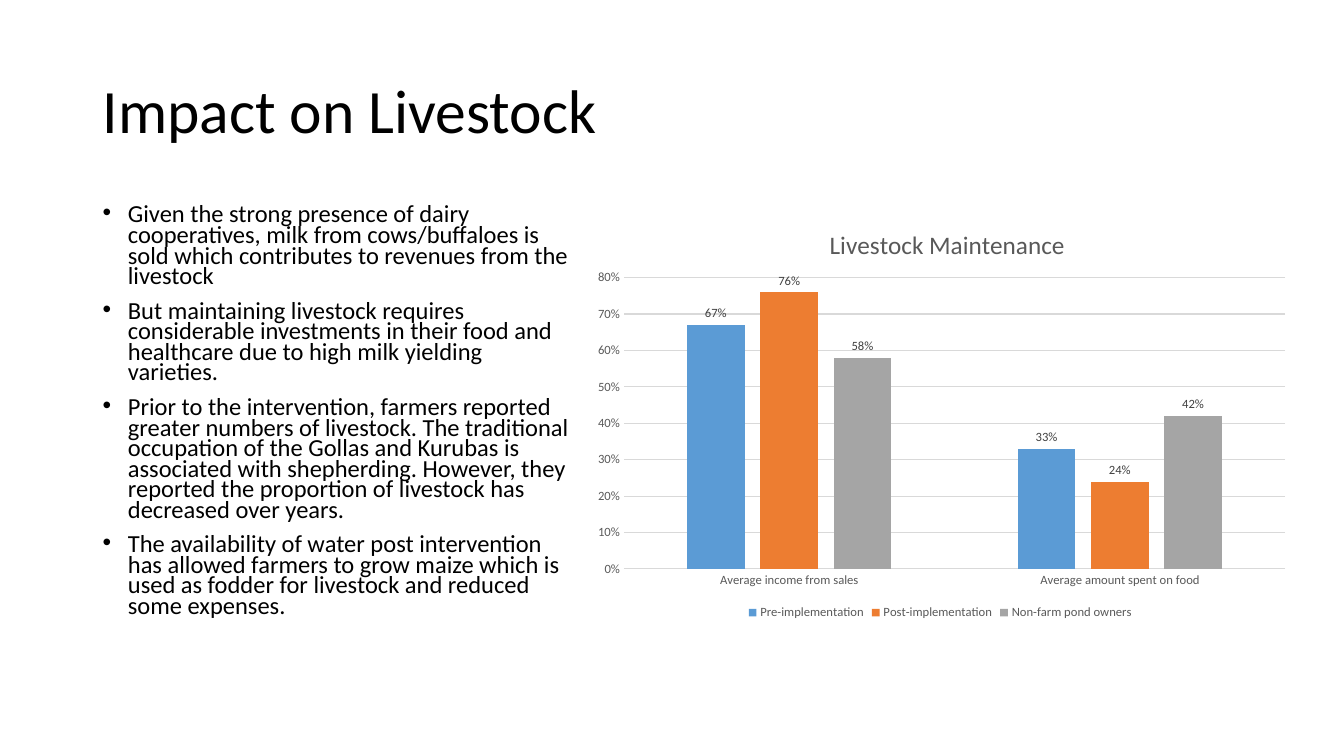
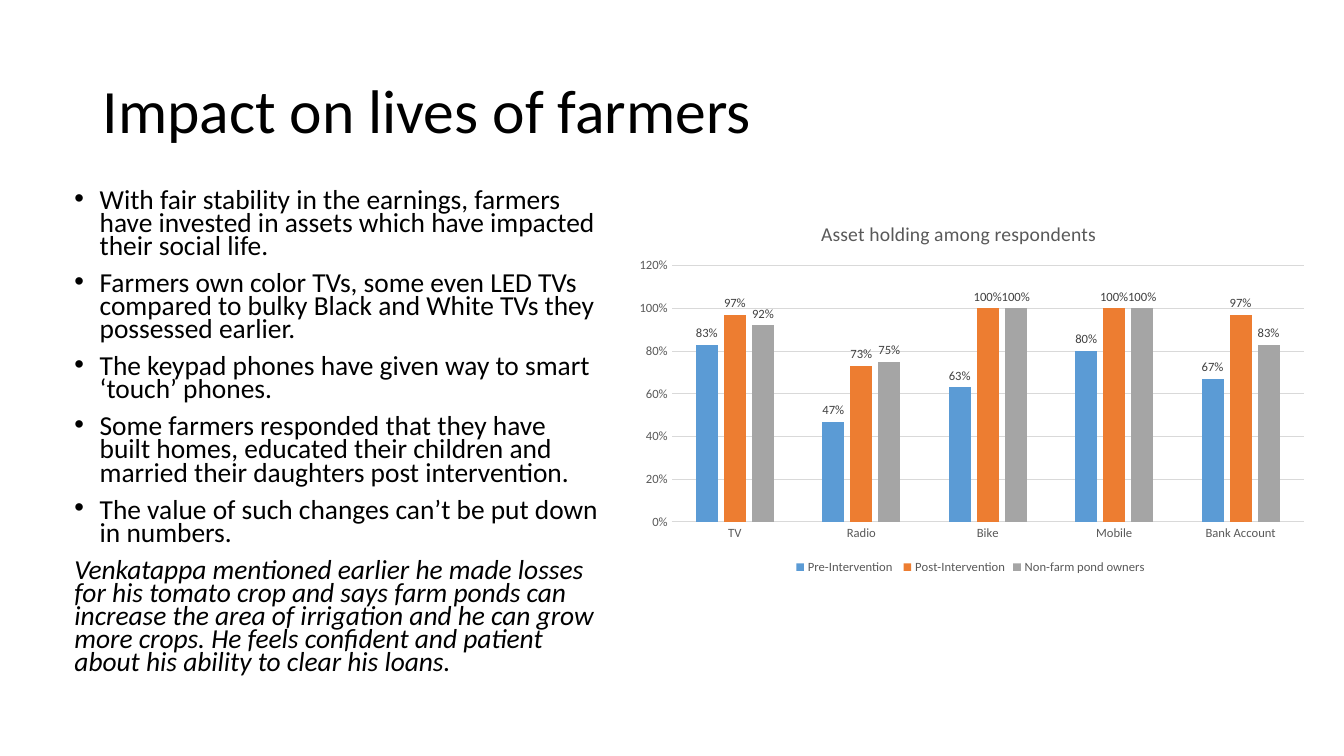
from lxml.etree import SubElement as Sub
from pptx import Presentation
from pptx.chart.data import CategoryChartData as Data
from pptx.dml.color import RGBColor as Rgb
from pptx.enum.chart import XL_CHART_TYPE as Kind, XL_LABEL_POSITION as Spot
from pptx.enum.chart import XL_LEGEND_POSITION as Side, XL_TICK_MARK as Tick
from pptx.enum.text import MSO_ANCHOR as Anchor
from pptx.oxml.ns import qn
from pptx.util import Inches, Pt

FONT = "Calibri"
HUES = {"text": "000000", "soft": "595959", "label": "404040", "grid": "D9D9D9",
        "pre": "5B9BD5", "post": "ED7D31", "none": "A5A5A5"}


def hue(name):
    """Return the named colour."""
    return Rgb.from_string(HUES[name])


def style(font, size, color, italic=False):
    """Format a font."""
    font.name, font.size, font.color.rgb = FONT, Pt(size), hue(color)
    font.bold, font.italic = False, italic


def write(para, text, size=18, color="text", italic=False, space=0.9, before=0, bullet=False):
    """Fill a paragraph with formatted text."""
    run = para.add_run()
    run.text = text
    style(run.font, size, color, italic)
    para.line_spacing, para.space_before = space, Pt(before)
    if bullet:
        props = para._p.get_or_add_pPr()
        props.set("marL", str(Inches(0.25)))
        props.set("indent", str(-Inches(0.25)))
        Sub(props, qn("a:buFont"), typeface="Arial")
        Sub(props, qn("a:buChar"), char="•")


def frame(slide, box):
    """Add a wrapping text box and return its text frame."""
    text = slide.shapes.add_textbox(*map(Inches, box)).text_frame
    text.word_wrap = True
    return text


def head(slide, text):
    """Add the slide title."""
    body = frame(slide, (0.92, 0.4, 11.5, 1.45))
    body.vertical_anchor = Anchor.MIDDLE
    write(body.paragraphs[0], text, size=44)


def points(slide, box, items, size, quote=None):
    """Add a bullet list with an optional closing quote."""
    body = frame(slide, box)
    rows = [(item, True) for item in items] + ([(quote, False)] if quote else [])
    for num, (text, mark) in enumerate(rows):
        para = body.add_paragraph() if num else body.paragraphs[0]
        write(para, text, size=size, italic=not mark, space=0.7, before=10, bullet=mark)


def place(node, index, **parts):
    """Give a chart part a fixed place, in fractions of the chart."""
    for old in node.findall(qn("c:layout")):
        node.remove(old)
    layout = node.makeelement(qn("c:layout"))
    node.insert(index, layout)
    manual = Sub(layout, qn("c:manualLayout"))
    if "w" in parts:
        Sub(manual, qn("c:layoutTarget"), val="inner")
    for key in "xy":
        Sub(manual, qn(f"c:{key}Mode"), val="edge")
    for key, val in parts.items():
        Sub(manual, qn(f"c:{key}"), val=str(val))


def axes(chart, top, step):
    """Format both axes and the grid."""
    for axis in (chart.category_axis, chart.value_axis):
        axis.major_tick_mark = axis.minor_tick_mark = Tick.NONE
        style(axis.tick_labels.font, 9, "soft")
    vals = chart.value_axis
    vals.minimum_scale, vals.maximum_scale, vals.major_unit = 0, top, step
    vals.tick_labels.number_format = "0%"
    vals.tick_labels.number_format_is_linked = False
    vals.format.line.fill.background()
    for part in (chart.category_axis, vals.major_gridlines):
        part.format.line.color.rgb = hue("grid")
        part.format.line.width = Pt(0.75)


def bars(slide, box, title, size, cats, series, top, step, spot, plot):
    """Add a clustered column chart."""
    data = Data(number_format="0%")
    data.categories = cats
    for name, vals in series:
        data.add_series(name, vals)
    chart = slide.shapes.add_chart(Kind.COLUMN_CLUSTERED, *map(Inches, box), data).chart
    style(chart.font, 10, "text")
    chart.has_title = True
    write(chart.chart_title.text_frame.paragraphs[0], title, size=size, color="soft", space=1)
    chart.chart_title.include_in_layout = False
    chart.has_legend = True
    chart.legend.position = Side.BOTTOM
    chart.legend.include_in_layout = False
    style(chart.legend.font, 9, "soft")
    axes(chart, top, step)
    group = chart.plots[0]
    group.gap_width, group.overlap, group.vary_by_categories = 219, -27, False
    for one, color in zip(group.series, ("pre", "post", "none")):
        one.format.fill.solid()
        one.format.fill.fore_color.rgb = hue(color)
        labels = one.data_labels
        labels.show_value, labels.position = True, Spot.OUTSIDE_END
        labels.number_format, labels.number_format_is_linked = "0%", False
        style(labels.font, 9, "label")
    root = chart.element
    place(root.find(".//" + qn("c:title")), 1, **dict(zip("xy", spot)))
    place(root.find(".//" + qn("c:plotArea")), 0, **dict(zip("xywh", plot)))


def stock(slide):
    """Build the livestock slide."""
    head(slide, "Impact on Livestock")
    points(slide, (0.92, 2, 4.85, 4.65), [
        "Given the strong presence of dairy cooperatives, milk from cows/buffaloes is sold "
        "which contributes to revenues from the livestock",
        "But maintaining livestock requires considerable investments in their food and "
        "healthcare due to high milk yielding varieties.",
        "Prior to the intervention, farmers reported greater numbers of livestock. The "
        "traditional occupation of the Gollas and Kurubas is associated with shepherding. "
        "However, they reported the proportion of livestock has decreased over years.",
        "The availability of water post intervention has allowed farmers to grow maize which "
        "is used as fodder for livestock and reduced some expenses."], 17.5)
    bars(slide, (5.76, 2, 7.13, 4.19), "Livestock Maintenance", 18,
         ["Average income from sales", "Average amount spent on food"],
         [("Pre-implementation", (0.67, 0.33)),
          ("Post-implementation", (0.76, 0.24)),
          ("Non-farm pond owners", (0.58, 0.42))],
         0.8, 0.1, (0.34, 0.05), (0.06, 0.18, 0.92, 0.69))


def lives(slide):
    """Build the slide on the lives of farmers."""
    head(slide, "Impact on lives of farmers")
    points(slide, (0.64, 1.85, 5.41, 5.13), [
        "With fair stability in the earnings, farmers have invested in assets which have "
        "impacted their social life.",
        "Farmers own color TVs, some even LED TVs compared to bulky Black and White TVs they "
        "possessed earlier.",
        "The keypad phones have given way to smart ‘touch’ phones.",
        "Some farmers responded that they have built homes, educated their children and "
        "married their daughters post intervention.",
        "The value of such changes can’t be put down in numbers."], 19.6,
        "Venkatappa mentioned earlier he made losses for his tomato crop and says farm ponds "
        "can increase the area of irrigation and he can grow more crops. He feels confident "
        "and patient about his ability to clear his loans.")
    bars(slide, (6.18, 2, 6.89, 3.74), "Asset holding among respondents", 14,
         ["TV", "Radio", "Bike", "Mobile", "Bank Account"],
         [("Pre-Intervention ", (0.83, 0.47, 0.63, 0.8, 0.67)),
          ("Post-Intervention", (0.97, 0.73, 1, 1, 0.97)),
          ("Non-farm pond owners", (0.92, 0.75, 1, 1, 0.83))],
         1.2, 0.2, (0.28, 0.04), (0.07, 0.17, 0.91, 0.68))


def main():
    """Build and save the deck."""
    deck = Presentation()
    deck.slide_width, deck.slide_height = Inches(13.33), Inches(7.5)
    for build in (stock, lives):
        build(deck.slides.add_slide(deck.slide_layouts[6]))
    deck.save("out.pptx")


if __name__ == "__main__":
    main()
